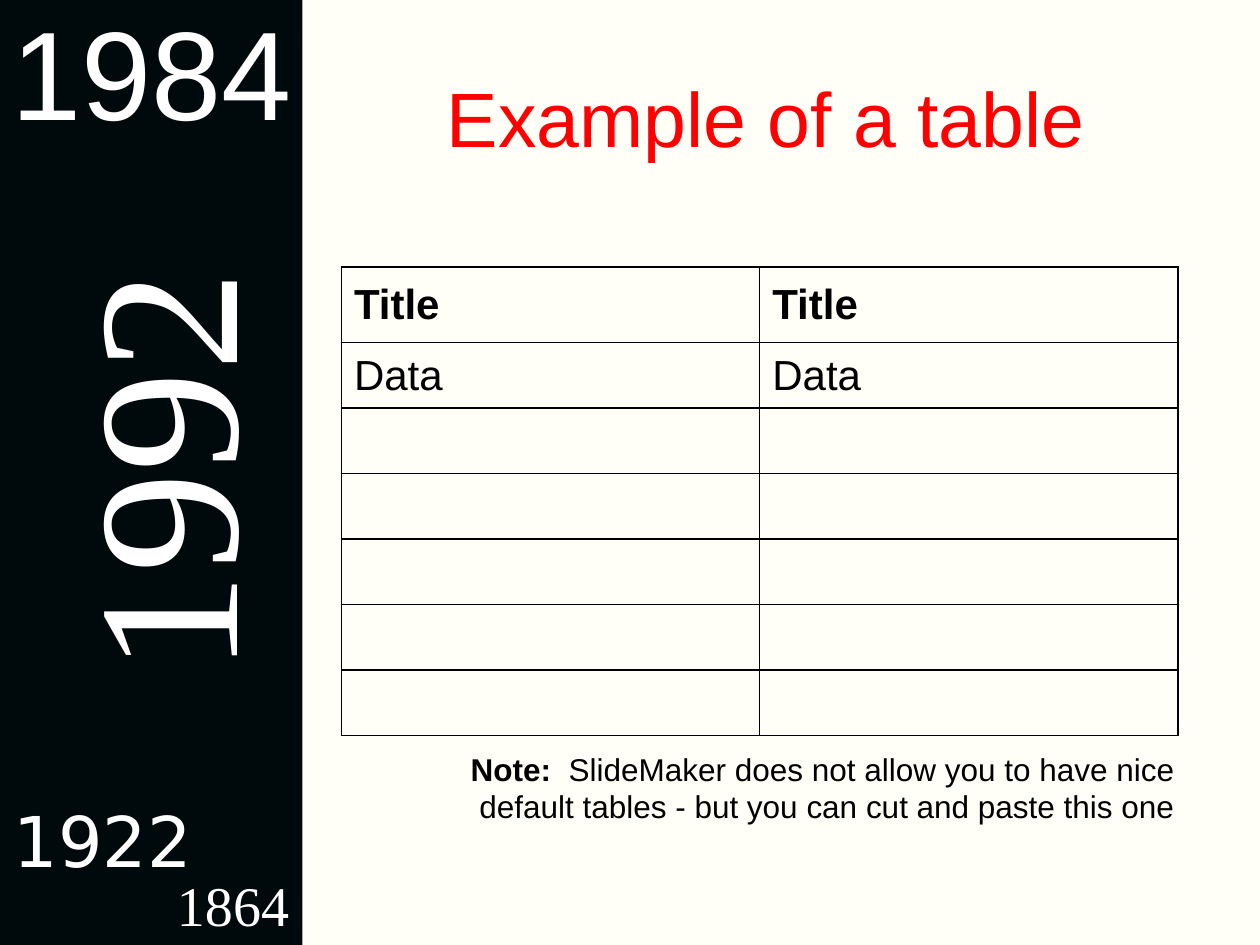
from dataclasses import dataclass

from lxml import etree
from pptx import Presentation
from pptx import util as u
from pptx.dml.color import RGBColor
from pptx.enum import shapes, text
from pptx.oxml import ns

IVORY, NIGHT, WHITE, RED, BLACK = "FFFFF7", "00090C", "FFFFFF", "FF0000", "000000"


@dataclass
class Run:
    text: str
    size: float
    color: str
    font: str = "Arial"
    bold: bool = False


@dataclass
class TextBox:
    box: tuple[float, float, float, float]
    runs: list[Run]
    align: text.PP_ALIGN = text.PP_ALIGN.CENTER
    wrap: bool = False
    grow: bool = True
    anchor: text.MSO_ANCHOR = text.MSO_ANCHOR.TOP
    rotation: float = 0


def set_color(color_format, color: str) -> None:
    color_format.rgb = RGBColor.from_string(color)


def set_fill(fill, color: str) -> None:
    fill.solid()
    set_color(fill.fore_color, color)


def set_values(target, values: dict) -> None:
    for name, value in values.items():
        setattr(target, name, value)


def add_run(paragraph, item: Run) -> None:
    run = paragraph.add_run()
    run.text = item.text
    set_values(run.font, {"name": item.font, "size": u.Pt(item.size), "bold": item.bold})
    set_color(run.font.color, item.color)


def add_text(slide, item: TextBox) -> None:
    shape = slide.shapes.add_textbox(*map(u.Inches, item.box))
    shape.rotation = item.rotation
    fit = text.MSO_AUTO_SIZE.SHAPE_TO_FIT_TEXT if item.grow else text.MSO_AUTO_SIZE.NONE
    set_values(shape.text_frame, {
        "word_wrap": item.wrap, "auto_size": fit, "vertical_anchor": item.anchor})
    paragraph = shape.text_frame.paragraphs[0]
    paragraph.alignment = item.align
    for run in item.runs:
        add_run(paragraph, run)


def add_borders(cell, color: str, width: float) -> None:
    properties = cell._tc.get_or_add_tcPr()
    for index, side in enumerate(("lnL", "lnR", "lnT", "lnB")):
        line = etree.Element(ns.qn(f"a:{side}"), w=str(u.Pt(width)))
        fill = etree.SubElement(line, ns.qn("a:solidFill"))
        etree.SubElement(fill, ns.qn("a:srgbClr"), val=color)
        properties.insert(index, line)


def add_grid(slide, left: float, top: float, column_width: float,
             row_heights: list[float], rows: list[list[str]]) -> None:
    columns = len(rows[0])
    table = slide.shapes.add_table(
        len(row_heights), columns, u.Inches(left), u.Inches(top),
        u.Inches(column_width * columns), u.Inches(sum(row_heights))).table
    set_values(table, {"first_row": False, "horz_banding": False})
    for column in table.columns:
        column.width = u.Inches(column_width)
    for row, height in zip(table.rows, row_heights):
        row.height = u.Inches(height)
    for cell in table.iter_cells():
        cell.vertical_anchor = text.MSO_ANCHOR.MIDDLE
        set_fill(cell.fill, IVORY)
        add_borders(cell, BLACK, 1)
    for row_index, words in enumerate(rows):
        for column_index, word in enumerate(words):
            paragraph = table.cell(row_index, column_index).text_frame.paragraphs[0]
            add_run(paragraph, Run(word, 24, BLACK, bold=row_index == 0))


YEARS = [
    TextBox((-1.5, 2.73, 5.52, 2.04), [Run("1992", 115, WHITE, "Times New Roman")],
            rotation=270),
    TextBox((-0.06, -0.09, 2.52, 1.31), [Run("1984", 72, WHITE)]),
    TextBox((0, 6.28, 1.63, 0.77), [Run("1922", 40, WHITE, "DejaVu Sans")]),
    TextBox((1.3, 6.86, 1.1, 0.64), [Run("1864", 32, WHITE, "Times New Roman")]),
]
TITLE = TextBox((2.66, 0.3, 6.84, 1.25), [Run("Example of a table", 44, RED)],
                wrap=True, grow=False, anchor=text.MSO_ANCHOR.MIDDLE)
NOTE = TextBox(
    (2.88, 5.9, 6.54, 0.71),
    [Run("Note:  ", 18, BLACK, bold=True),
     Run("SlideMaker does not allow you to have nice default tables"
         " - but you can cut and paste this one", 18, BLACK)],
    align=text.PP_ALIGN.RIGHT, wrap=True)


def main() -> None:
    presentation = Presentation()
    set_values(presentation, {"slide_width": u.Inches(10), "slide_height": u.Inches(7.5)})
    slide = presentation.slides.add_slide(presentation.slide_layouts[6])
    set_fill(slide.background.fill, IVORY)

    # Dark side band with the years
    band = slide.shapes.add_shape(
        shapes.MSO_SHAPE.RECTANGLE, 0, 0, u.Inches(2.4), u.Inches(7.5))
    band.shadow.inherit = False
    set_fill(band.fill, NIGHT)
    band.line.fill.background()
    for year in YEARS:
        add_text(slide, year)

    # Title, table and note
    add_text(slide, TITLE)
    add_grid(slide, 2.71, 2.12, 3.32, [0.6] + [0.52] * 6, [["Title"] * 2, ["Data"] * 2])
    add_text(slide, NOTE)

    presentation.save("out.pptx")


if __name__ == "__main__":
    main()
